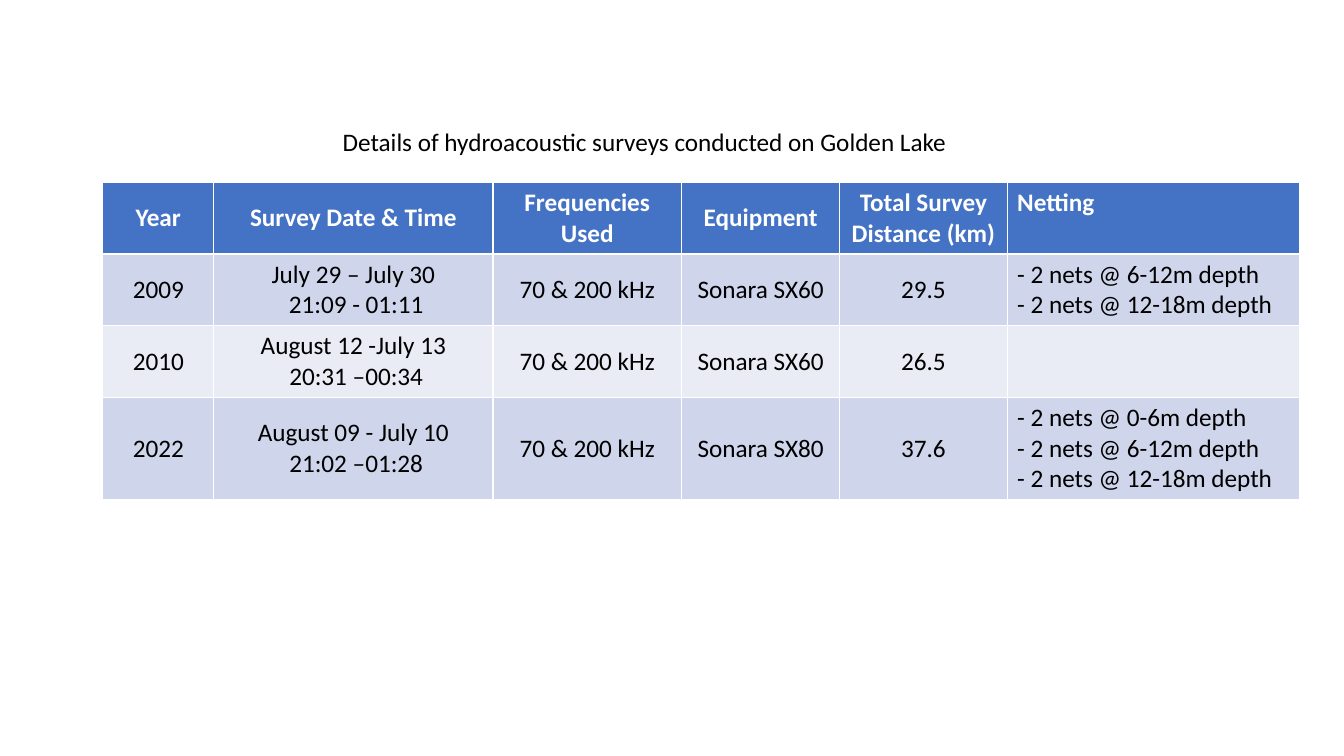
from pptx import Presentation, util as u
from pptx.dml.color import RGBColor
from pptx.enum import text

WHITE, BLACK = "FFFFFF", "000000"
HEADER, BANDS = "4472C4", ("CFD5EA", "E9EBF5")


def style(paragraphs, color, bold=False, align=text.PP_ALIGN.LEFT):
    for p in paragraphs:
        p.alignment = align
        p.font.name = "Calibri"
        p.font.size = u.Pt(18)
        p.font.bold = bold
        p.font.color.rgb = RGBColor.from_string(color)


prs = Presentation()
prs.slide_width, prs.slide_height = u.Inches(13.33), u.Inches(7.5)
s = prs.slides.add_slide(prs.slide_layouts[6])

# Survey table: \v breaks a line, \n starts a paragraph
rows = [
    ["Year", "Survey Date & Time", "Frequencies Used", "Equipment",
     "Total Survey Distance (km)", "Netting"],
    ["2009", "July 29 – July 30\v 21:09 - 01:11", "70 & 200 kHz", "Sonara SX60",
     "29.5", "- 2 nets @ 6-12m depth\n- 2 nets @ 12-18m depth"],
    ["2010", "August 12 -July 13\v 20:31 –00:34", "70 & 200 kHz", "Sonara SX60",
     "26.5", ""],
    ["2022", "August 09 - July 10\v 21:02 –01:28", "70 & 200 kHz", "Sonara SX80",
     "37.6", "- 2 nets @ 0-6m depth\n- 2 nets @ 6-12m depth\n- 2 nets @ 12-18m depth"],
]
widths = [1.1, 2.77, 1.87, 1.57, 1.66, 2.9]
heights = [0.71, 0.71, 0.71, 1.01]

table = s.shapes.add_table(len(rows), len(widths), u.Inches(1.02), u.Inches(1.81),
                           u.Inches(sum(widths)), u.Inches(sum(heights))).table
for column, width in zip(table.columns, widths):
    column.width = u.Inches(width)

for i, values in enumerate(rows):
    table.rows[i].height = u.Inches(heights[i])
    header = i == 0
    fill = HEADER if header else BANDS[(i - 1) % 2]
    for j, value in enumerate(values):
        cell = table.cell(i, j)
        cell.fill.solid()
        cell.fill.fore_color.rgb = RGBColor.from_string(fill)
        cell.text_frame.text = value
        netting = j == len(widths) - 1
        cell.vertical_anchor = text.MSO_ANCHOR.TOP if netting else text.MSO_ANCHOR.MIDDLE
        style(cell.text_frame.paragraphs, WHITE if header else BLACK, header,
              text.PP_ALIGN.LEFT if netting else text.PP_ALIGN.CENTER)

# Table caption
tf = s.shapes.add_textbox(u.Inches(3.3), u.Inches(1.2), u.Inches(6.26), u.Inches(0.4)).text_frame
tf.word_wrap = False
tf.auto_size = text.MSO_AUTO_SIZE.SHAPE_TO_FIT_TEXT
tf.text = "Details of hydroacoustic surveys conducted on Golden Lake"
style(tf.paragraphs, BLACK)

prs.save("out.pptx")
